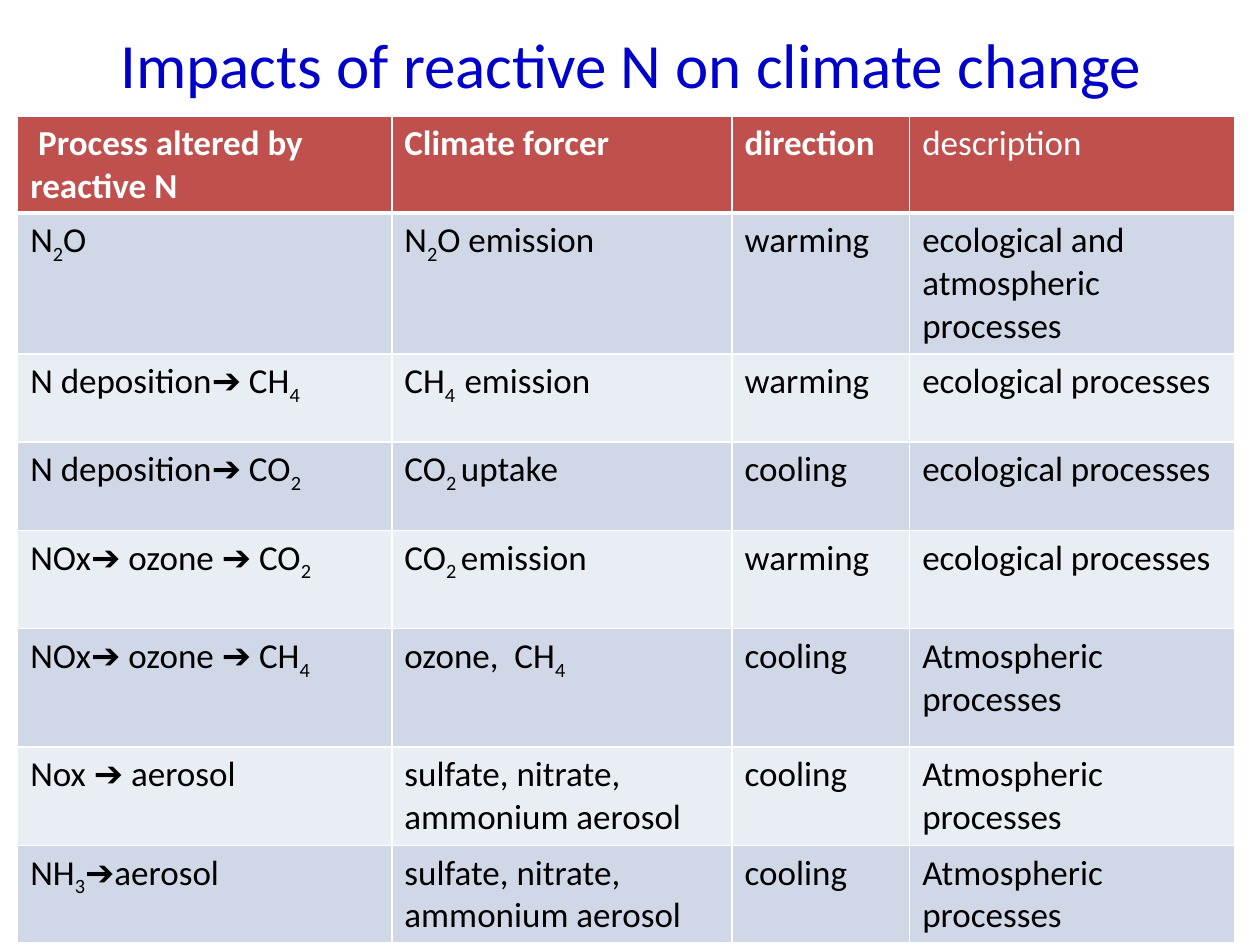
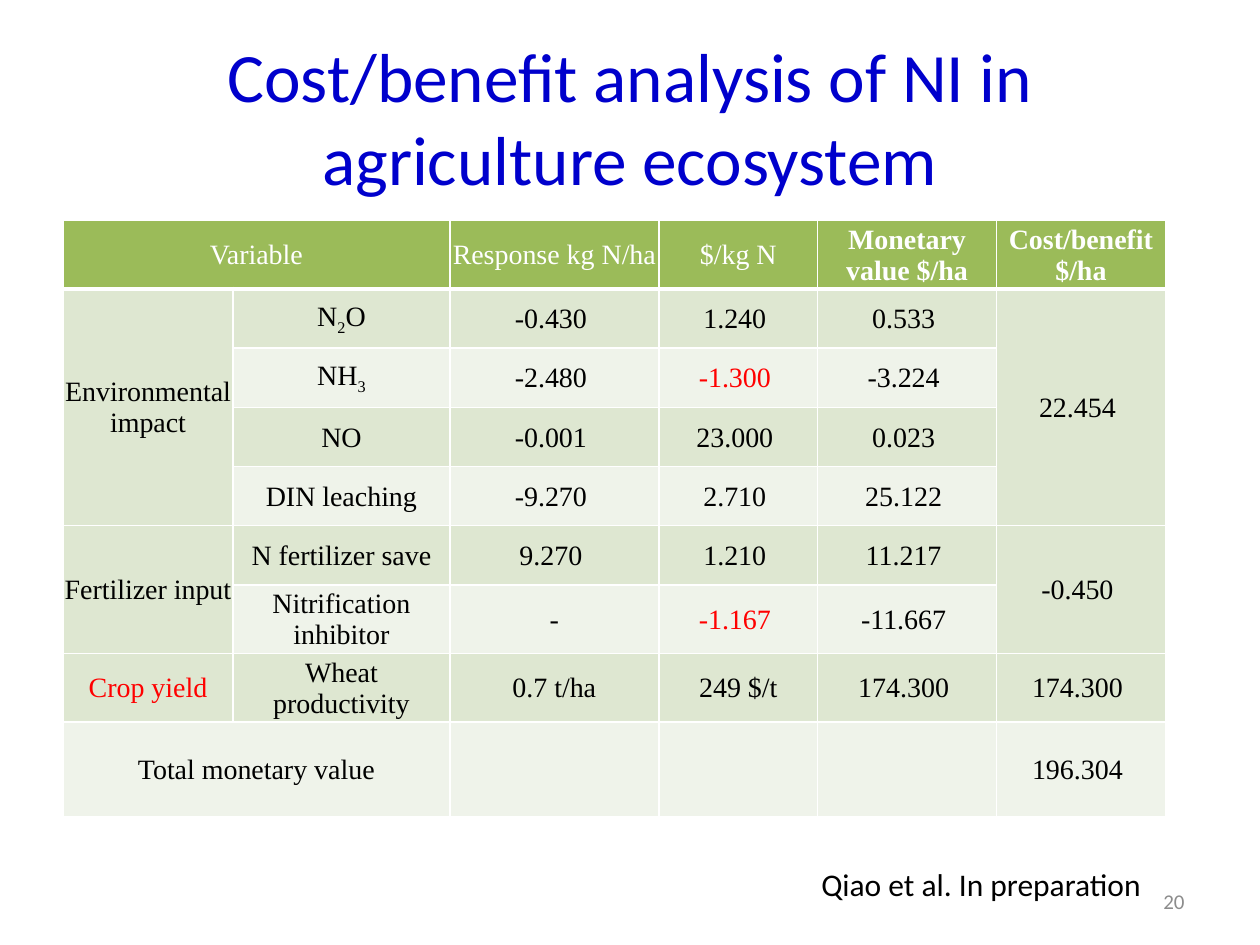
from lxml import etree
from pptx import Presentation
from pptx.dml.color import RGBColor
from pptx.enum.text import MSO_ANCHOR, PP_ALIGN
from pptx.oxml.ns import qn
from pptx.util import Inches, Pt

LEFT, CENTER, RIGHT = PP_ALIGN.LEFT, PP_ALIGN.CENTER, PP_ALIGN.RIGHT
TOP, MIDDLE = MSO_ANCHOR.TOP, MSO_ANCHOR.MIDDLE
SANS, SERIF = "Calibri", "Times New Roman"

COLORS = {
    "title": "0000CC", "text": "000000", "light": "FFFFFF", "alert": "FF0000",
    "number": "8C8C8C",
    "red": "C0504D", "blue": "D0D8E8", "pale blue": "E9EDF4",
    "green": "9BBB59", "sage": "DEE7D1", "pale sage": "EFF3EA",
}

# In cell text, _x_ marks a subscript, a leading * bold and a leading ! red.
IMPACTS = [
    ["* Process altered by reactive N", "*Climate forcer", "*direction", "description"],
    ["N_2_O", "N_2_O emission", "warming", "ecological and atmospheric processes"],
    ["N deposition➔ CH_4_", "CH_4  _emission", "warming", "ecological processes"],
    ["N deposition➔ CO_2_", "CO_2 _uptake", "cooling", "ecological processes"],
    ["NOx➔ ozone ➔ CO_2_", "CO_2 _emission", "warming", "ecological processes"],
    ["NOx➔ ozone ➔ CH_4_", "ozone,  CH_4_", "cooling", "Atmospheric processes"],
    ["Nox ➔ aerosol", "sulfate, nitrate,  ammonium aerosol", "cooling",
     "Atmospheric processes"],
    ["NH_3_➔aerosol", "sulfate, nitrate,  ammonium aerosol", "cooling",
     "Atmospheric processes"],
]
COSTS = [
    ["Variable", "", "Response kg N/ha", "$/kg N", "*Monetary value $/ha",
     "*Cost/benefit $/ha"],
    ["Environmental impact", "N_2_O", "-0.430 ", "1.240 ", "0.533 ", "22.454 "],
    ["", "NH_3_", "-2.480 ", "!-1.300 ", "-3.224 ", ""],
    ["", "NO", "-0.001 ", "23.000 ", "0.023 ", ""],
    ["", "DIN leaching", "-9.270 ", "2.710 ", "25.122 ", ""],
    ["Fertilizer input", "N fertilizer save", "9.270 ", "1.210 ", "11.217 ", "-0.450 "],
    ["", "Nitrification inhibitor", "-", "!-1.167 ", "-11.667 ", ""],
    ["!Crop yield", "Wheat productivity", "0.7 t/ha", "249 $/t", "174.300 ", "174.300 "],
    ["Total monetary value", "", "", "", "", "196.304 "],
]
# First and last cell of each merged block, as (row, column).
MERGES = [((0, 0), (0, 1)), ((1, 0), (4, 0)), ((1, 5), (4, 5)),
          ((5, 0), (6, 0)), ((5, 5), (6, 5)), ((8, 0), (8, 1))]


def rgb(name):
    return RGBColor.from_string(COLORS[name])


def add_run(para, text, size, color, font=SANS, bold=False, sub=False):
    run = para.add_run()
    run.text = text
    run.font.size, run.font.name, run.font.bold = Pt(size), font, bold
    run.font.color.rgb = rgb(color)
    if sub:
        run.font._element.set("baseline", "-25000")


def add_text(slide, box, text, size, color, align=LEFT, anchor=TOP, wrap=True):
    frame = slide.shapes.add_textbox(*map(Inches, box)).text_frame
    frame.word_wrap, frame.vertical_anchor = wrap, anchor
    para = frame.paragraphs[0]
    para.alignment = align
    add_run(para, text, size, color)


def add_title(slide, box, text, size):
    add_text(slide, box, text, size, "title", CENTER, MIDDLE)


def add_borders(cell, base):
    """Rule all four sides in white, with base as the bottom width in points."""
    props = cell._tc.get_or_add_tcPr()
    for side, width in zip("LRTB", (1, 1, 1, base)):
        line = etree.SubElement(props, qn("a:ln" + side), w=str(Pt(width)))
        fill = etree.SubElement(line, qn("a:solidFill"))
        etree.SubElement(fill, qn("a:srgbClr"), val=COLORS["light"])


def fill_cell(cell, text, size, font, color, align):
    """Write marked-up cell text run by run."""
    bold = text.startswith("*")
    if text.startswith("!"):
        color = "alert"
    para = cell.text_frame.paragraphs[0]
    para.alignment = align
    for i, part in enumerate(text.lstrip("*!").split("_")):
        if part:
            add_run(para, part, size, color, font, bold, sub=i % 2 == 1)


def add_grid(slide, spot, cols, rows, data, fills, size, font,
             align=LEFT, anchor=TOP, insets=None):
    """Add a table; fills names the header, odd-row and even-row colours."""
    box = (*spot, sum(cols), sum(rows))
    frame = slide.shapes.add_table(len(rows), len(cols), *map(Inches, box))
    table = frame.table
    table.first_row = table.horz_banding = False
    for col, width in zip(table.columns, cols):
        col.width = Inches(width)
    for r, (line, height) in enumerate(zip(data, rows)):
        table.rows[r].height = Inches(height)
        head = r == 0
        shade = fills[0] if head else fills[2 - r % 2]
        for c, text in enumerate(line):
            cell = table.cell(r, c)
            add_borders(cell, 3 if head else 1)
            cell.fill.solid()
            cell.fill.fore_color.rgb = rgb(shade)
            cell.vertical_anchor = anchor
            if insets:
                (cell.margin_left, cell.margin_top,
                 cell.margin_right, cell.margin_bottom) = map(Inches, insets)
            fill_cell(cell, text, size, font, "light" if head else "text", align)
    return table


def add_impacts(slide):
    add_title(slide, (0.51, 0.13, 9, 0.75), "Impacts of reactive N on climate change", 36)
    add_grid(slide, (0.14, 0.92), [2.97, 2.7, 1.41, 2.58],
             [0.77, 1.12, 0.7, 0.7, 0.78, 0.94, 0.78, 0.77],
             IMPACTS, ("red", "blue", "pale blue"), 20, SANS)


def add_costs(slide):
    add_title(slide, (0.5, 0.3, 9, 1.25),
              "Cost/benefit analysis of NI in agriculture ecosystem", 39.6)
    table = add_grid(slide, (0.5, 1.75), [1.35, 1.72, 1.66, 1.26, 1.42, 1.34],
                     [0.47] * 8 + [0.75], COSTS, ("green", "sage", "pale sage"),
                     16, SERIF, CENTER, MIDDLE, (0.01, 0.01, 0.01, 0))
    for first, last in MERGES:
        table.cell(*first).merge(table.cell(*last))
    add_text(slide, (7.17, 6.95, 2.33, 0.4), "20", 12, "number", RIGHT, MIDDLE)
    add_text(slide, (6.42, 6.82, 2.77, 0.4), "Qiao et al. In preparation", 18,
             "text", wrap=False)


def main():
    deck = Presentation()
    deck.slide_width, deck.slide_height = Inches(10), Inches(7.5)
    blank = deck.slide_layouts[6]
    for build in (add_impacts, add_costs):
        build(deck.slides.add_slide(blank))
    deck.save("out.pptx")


if __name__ == "__main__":
    main()
